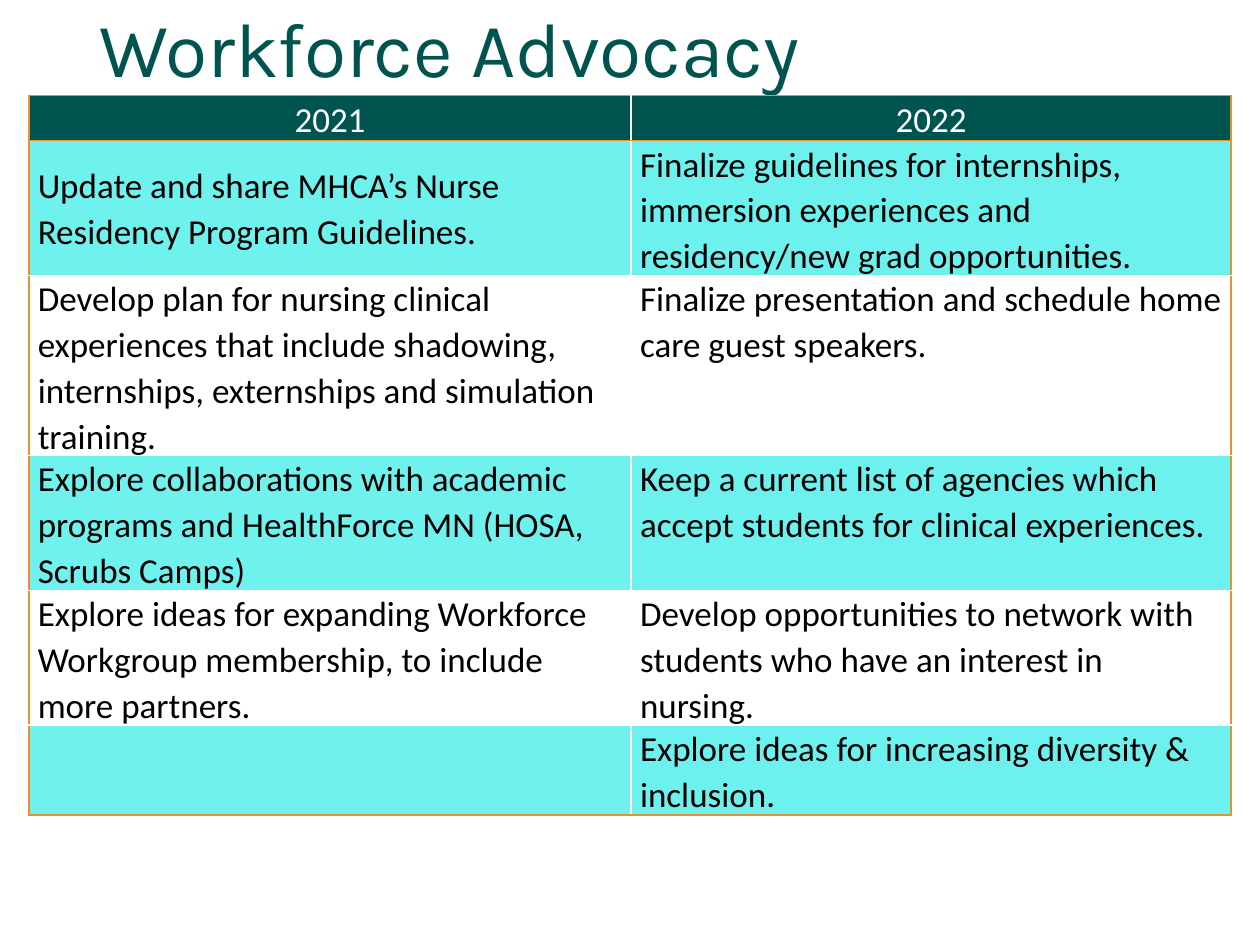
"""Build the Workforce Advocacy slide with its two-year goal table."""
from dataclasses import dataclass

from lxml import etree
from pptx import Presentation
from pptx.dml.color import RGBColor
from pptx.enum import text
from pptx.oxml.ns import qn
from pptx.util import Inches, Pt


@dataclass(frozen=True)
class Theme:
    green: str = "005450"
    orange: str = "E29334"
    white: str = "FFFFFF"
    black: str = "000000"
    bands: tuple[str, str] = ("6FF1EE", "6CF1EE")
    title_font: str = "Karla"
    body_font: str = "Calibri"
    title_size: int = 44
    body_size: int = 20


@dataclass(frozen=True)
class Goal:
    height: float
    year_2021: str
    year_2022: str
    spaced: tuple[bool, bool] = (False, False)


THEME = Theme()
COLUMNS = (4.78, 4.76)
GOALS = (
    Goal(0.32, "2021", "2022"),
    Goal(1, "Update and share MHCA’s Nurse Residency Program Guidelines.",
         "Finalize guidelines for internships, immersion experiences and "
         "residency/new grad opportunities."),
    Goal(1.34, "Develop plan for nursing clinical experiences that include shadowing, "
         "internships, externships and simulation training.",
         "Finalize presentation and schedule home care guest speakers.", (True, False)),
    Goal(1, "Explore collaborations with academic programs and HealthForce MN "
         "(HOSA, Scrubs Camps)",
         "Keep a current list of agencies which accept students for clinical experiences.",
         (True, True)),
    Goal(1, "Explore ideas for expanding Workforce Workgroup membership, "
         "to include more partners.",
         "Develop opportunities to network with students who have an interest in nursing.",
         (True, False)),
    Goal(0.66, "", "Explore ideas for increasing diversity & inclusion."),
)


def style_font(font, name: str, size: int, color: str) -> None:
    """Set the typeface, size and colour of a font."""
    font.name, font.size = name, Pt(size)
    font.color.rgb = RGBColor.from_string(color)


def set_borders(cell, colors: dict[str, str]) -> None:
    """Draw one-point lines on the named sides, ahead of the cell fill."""
    props = cell._tc.get_or_add_tcPr()
    for index, (side, color) in enumerate(colors.items()):
        line = etree.Element(qn(f"a:ln{side}"), w=str(Pt(1)))
        fill = etree.SubElement(line, qn("a:solidFill"))
        etree.SubElement(fill, qn("a:srgbClr"), val=color)
        props.insert(index, line)


def draw_title(s, caption: str) -> None:
    """Place the slide title."""
    tf = s.shapes.add_textbox(Inches(0.69), 0, Inches(8.62), Inches(0.83)).text_frame
    tf.word_wrap = True
    tf.vertical_anchor = text.MSO_ANCHOR.MIDDLE
    tf.text = caption
    p = tf.paragraphs[0]
    p.line_spacing = 0.9
    style_font(p.runs[0].font, THEME.title_font, THEME.title_size, THEME.green)


def draw_cell(cell, row: int, col: int, caption: str, spaced: bool) -> None:
    """Fill, outline and caption one table cell."""
    header, last = row == 0, row == len(GOALS) - 1
    cell.margin_left = cell.margin_right = Inches(0.07)
    cell.margin_top = cell.margin_bottom = 0
    if col == 0 and not header:
        cell.vertical_anchor = text.MSO_ANCHOR.MIDDLE
    if header or row % 2:
        cell.fill.solid()
        fill = THEME.green if header else THEME.bands[col]
        cell.fill.fore_color.rgb = RGBColor.from_string(fill)
    else:
        cell.fill.background()
    orange_sides = {"L": col == 0, "R": col == 1, "T": row <= 1, "B": header or last}
    set_borders(cell, {side: THEME.orange if orange else THEME.white
                       for side, orange in orange_sides.items()})
    cell.text_frame.text = caption
    p = cell.text_frame.paragraphs[0]
    p.line_spacing = 1.07
    if header:
        p.alignment = text.PP_ALIGN.CENTER
    if spaced:
        p.space_after = Pt(8)
    for r in p.runs:
        style_font(r.font, THEME.body_font, THEME.body_size,
                   THEME.white if header else THEME.black)
        r.font.bold = False


def draw_goals(s) -> None:
    """Place the table of goals by year."""
    height = sum(goal.height for goal in GOALS)
    table = s.shapes.add_table(len(GOALS), len(COLUMNS), Inches(0.23), Inches(0.76),
                               Inches(sum(COLUMNS)), Inches(height)).table
    for column, width in zip(table.columns, COLUMNS):
        column.width = Inches(width)
    for row, goal in enumerate(GOALS):
        table.rows[row].height = Inches(goal.height)
        for col, caption in enumerate((goal.year_2021, goal.year_2022)):
            draw_cell(table.cell(row, col), row, col, caption, goal.spaced[col])


def main() -> None:
    """Assemble and save the slide."""
    prs = Presentation()
    prs.slide_width, prs.slide_height = Inches(10), Inches(7.5)
    s = prs.slides.add_slide(prs.slide_layouts[6])
    draw_title(s, "Workforce Advocacy")
    draw_goals(s)
    prs.save("out.pptx")


if __name__ == "__main__":
    main()
